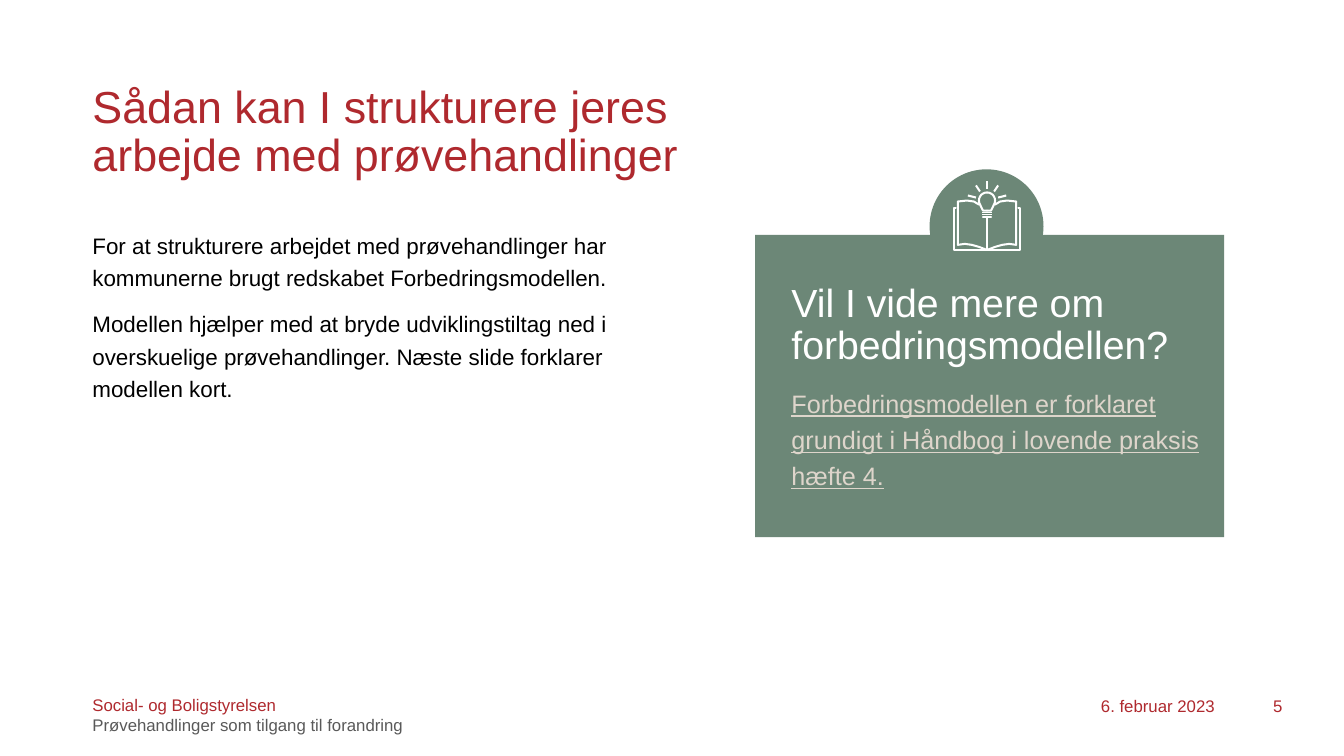
from math import cos, hypot, radians, sin

from lxml import etree
from pptx import Presentation
from pptx import util as u
from pptx.dml.color import RGBColor
from pptx.enum import shapes, text

# Content
RED, GREEN, SAND, GREY = "AF292E", "6C8777", "DED5CB", "595959"
WHITE, BLACK = "FFFFFF", "000000"
TITLE = "Sådan kan I strukturere jeres arbejde med prøvehandlinger"

# Paragraph: wording, size, colour, line spacing, space before, underline
BODY = [
    ("For at strukturere arbejdet med prøvehandlinger har kommunerne brugt "
     "redskabet Forbedringsmodellen.", 16, BLACK, 1.2, 10, False),
    ("Modellen hjælper med at bryde udviklingstiltag ned i overskuelige "
     "prøvehandlinger. Næste slide forklarer modellen kort.", 16, BLACK, 1.2, 10, False),
]
CARD_TEXT = [
    ("Vil I vide mere om forbedringsmodellen?", 28, WHITE, 0.9, 10, False),
    ("Forbedringsmodellen er forklaret grundigt i Håndbog i lovende praksis "
     "hæfte 4.", 18, SAND, 1.2, 10, True),
]
FOOTER = [
    ("Social- og Boligstyrelsen", 12, RED, 1.0, 0, False),
    ("Prøvehandlinger som tilgang til forandring", 12, GREY, 1.0, 0, False),
]
DATE = [("6. februar 2023", 12, RED, 1.0, 0, False)]
NUMBER = [("5", 12, RED, 1.0, 0, False)]

# Layout in inches
LEFT, COLUMN = 11 / 12, 5.85
CARD = (7.49, 2.33, 4.65, 3)
BADGE = (9.22, 1.68, 1.13, 1.13)
CARD_PAD = 0.36

# Icon: x is the distance from the book's spine, y the height on the slide
SPINE, STROKE = 9.79, 0.02
BULB = [(0.08 * sin(radians(a)), 1.99 - 0.08 * cos(radians(a)))
        for a in range(0, 121, 15)] + [(0.04, 2.09), (0, 2.09)]
PAGE = [(0.08, 2.03), (0.13, 2.0), (0.2, 1.99), (0.29, 2.0), (0.29, 2.43),
        (0.22, 2.42), (0.15, 2.43), (0.08, 2.45), (0, 2.48)]
COVER = [(0.31, 2.06), (0.33, 2.06), (0.33, 2.48), (0, 2.48)]
SOCKET = [(0, 2.15), (0.04, 2.15)]
BOOK_SPINE = [(0, 2.15), (0, 2.47)]
RAYS = [[(0.11, 1.84), (0.07, 1.9)], [(0.19, 1.94), (0.11, 1.96)]]
TOP_RAY = [(0, 1.8), (0, 1.88)]
THREADS = [[(-0.05, y), (0.05, y)] for y in (2.11, 2.13)]


def rgb(value):
    return RGBColor.from_string(value)


def place(sp, box):
    sp.left, sp.top, sp.width, sp.height = map(u.Inches, box)


def write(sp, lines, align=text.PP_ALIGN.LEFT, insets=(0, 0, 0, 0)):
    tf = sp.text_frame
    tf.word_wrap = True
    tf.auto_size = text.MSO_AUTO_SIZE.NONE
    tf.vertical_anchor = text.MSO_ANCHOR.TOP
    tf.margin_left, tf.margin_top, tf.margin_right, tf.margin_bottom = map(u.Inches, insets)
    tf.text = "\n".join(line[0] for line in lines)
    for p, (_, size, color, spacing, before, underline) in zip(tf.paragraphs, lines):
        p.alignment, p.line_spacing, p.space_before = align, spacing, u.Pt(before)
        font = p.runs[0].font
        font.name, font.size, font.underline = "Arial", u.Pt(size), underline
        font.color.rgb = rgb(color)


def add_text(slide, box, lines, **style):
    write(slide.shapes.add_textbox(*map(u.Inches, box)), lines, **style)


def fill(sp, color):
    sp.shadow.inherit = False
    sp.fill.solid()
    sp.fill.fore_color.rgb = rgb(color)
    sp.line.fill.background()


def mirror(strokes):
    return [[(side * x, y) for x, y in s] for s in strokes for side in (-1, 1)]


def add_outline(slide, strokes, close):
    strokes = [[((SPINE + x) * 1000, y * 1000) for x, y in s] for s in strokes]
    builder = slide.shapes.build_freeform(*strokes[0][0], scale=914.4)
    for i, stroke in enumerate(strokes):
        if i:
            builder.move_to(*stroke[0])
        builder.add_line_segments(stroke[1:], close=close)
    return builder.convert_to_shape()


def add_bar(slide, start, end, width):
    (x1, y1), (x2, y2) = start, end
    scale = width / 2 / hypot(x2 - x1, y2 - y1)
    dx, dy = (y1 - y2) * scale, (x2 - x1) * scale
    corners = [(x1 + dx, y1 + dy), (x2 + dx, y2 + dy),
               (x2 - dx, y2 - dy), (x1 - dx, y1 - dy)]
    fill(add_outline(slide, [corners], close=True), WHITE)


def add_icon(slide):
    book = add_outline(slide, mirror([BULB, PAGE, COVER, SOCKET]) + [BOOK_SPINE], close=False)
    book.shadow.inherit = False
    book.fill.background()
    book.line.color.rgb = rgb(WHITE)
    book.line.width = u.Inches(STROKE)
    line = book.line._get_or_add_ln()
    line.set("cap", "rnd")
    etree.SubElement(line, "{http://schemas.openxmlformats.org/drawingml/2006/main}round")
    for ray in [TOP_RAY] + mirror(RAYS):
        add_bar(slide, *ray, STROKE)
    for thread in THREADS:
        add_bar(slide, *thread, 0.01)


def main():
    prs = Presentation()
    prs.slide_width, prs.slide_height = u.Inches(13.33), u.Inches(7.5)
    slide = prs.slides.add_slide(prs.slide_layouts[5])

    # Title and body
    title = slide.shapes.title
    place(title, (LEFT, 0.84, COLUMN, 0.93))
    write(title, [(TITLE, 32, RED, 0.9, 10, False)])
    add_text(slide, (LEFT, 2.25, COLUMN, 2.19), BODY)

    # Card with badge
    fill(slide.shapes.add_shape(shapes.MSO_SHAPE.RECTANGLE, *map(u.Inches, CARD)), GREEN)
    fill(slide.shapes.add_shape(shapes.MSO_SHAPE.OVAL, *map(u.Inches, BADGE)), GREEN)
    add_text(slide, (CARD[0] + CARD_PAD, 2.81, 4.35, 2.73), CARD_TEXT)
    add_icon(slide)

    # Footer
    add_text(slide, (LEFT, 6.89, 4.36, 0.6), FOOTER)
    for x, width, lines in ((10.12, 1.93, DATE), (12.04, 0.68, NUMBER)):
        add_text(slide, (x, 6.9, width, 0.4), lines,
                 align=text.PP_ALIGN.RIGHT, insets=(0.1, 0, 0, 0.05))

    prs.save("out.pptx")


if __name__ == "__main__":
    main()
